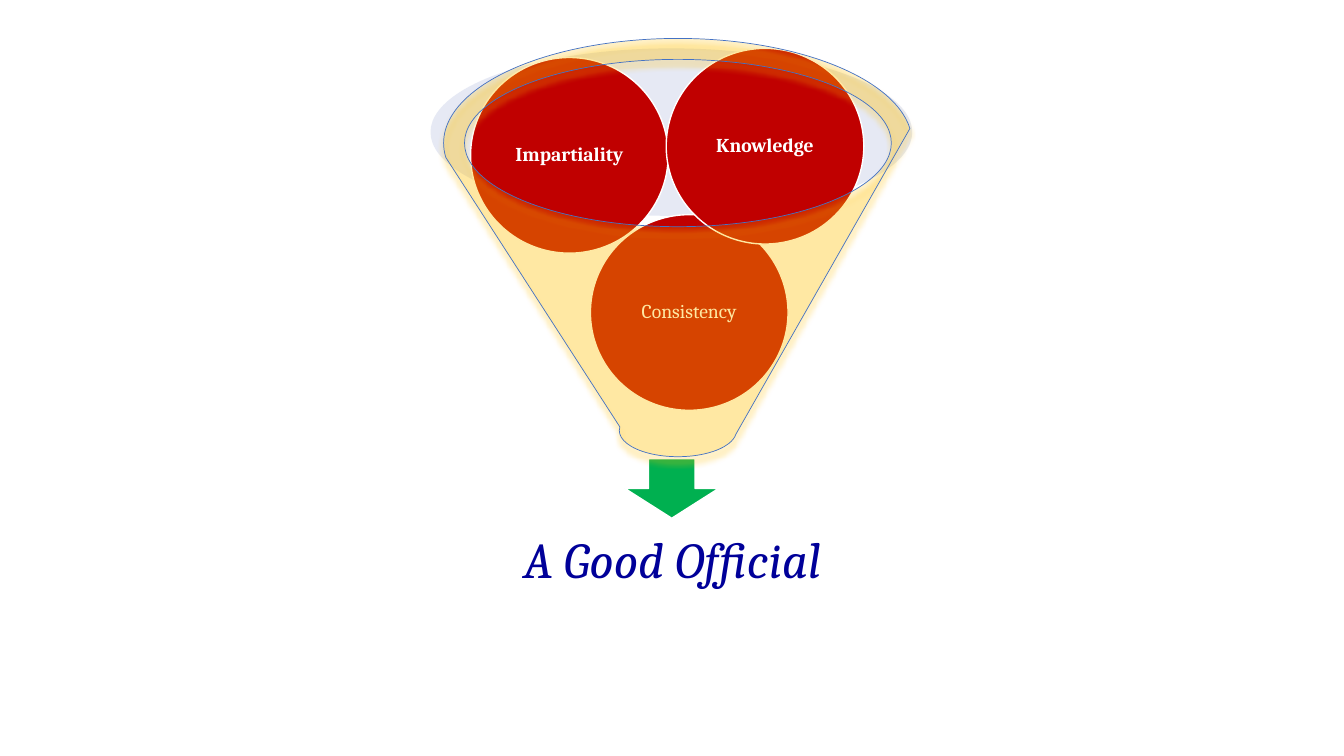
from pptx import Presentation
from pptx.dml.color import RGBColor
from pptx.enum.shapes import MSO_SHAPE
from pptx.enum.text import MSO_ANCHOR, PP_ALIGN
from pptx.oxml.ns import qn
from pptx.util import Cm, Pt
from lxml.etree import SubElement

FONT = "Cambria"
COLORS = {
    "rim": "C1C9E4",
    "arrow": "00B050",
    "ball": "C00000",
    "funnel": "FFC000",
    "edge": "4472C4",
    "white": "FFFFFF",
    "navy": "000099",
}
BALLS = [
    ("Consistency", 14.88, 5.41, False),
    ("Impartiality", 11.86, 1.45, True),
    ("Knowledge", 16.79, 1.22, True),
]


def color(name):
    return RGBColor.from_string(COLORS[name])


def add_shape(slide, kind, box, fill, line=None, width=1):
    shape = slide.shapes.add_shape(kind, *map(Cm, box))
    shape.shadow.inherit = False
    shape.fill.solid()
    shape.fill.fore_color.rgb = color(fill)
    if line:
        shape.line.color.rgb = color(line)
        shape.line.width = Pt(width)
    else:
        shape.line.fill.background()
    return shape


def set_alpha(shape, percent):
    tint = shape.element.spPr.find(qn("a:solidFill"))[0]
    SubElement(tint, qn("a:alpha"), val=str(percent * 1000))


def add_shadow(shape, name, blur, dist):
    effects = shape.element.spPr.find(qn("a:effectLst"))
    shadow = SubElement(
        effects, qn("a:outerShdw"), blurRad=str(Pt(blur)),
        dist=str(Pt(dist)), dir="5400000", rotWithShape="0")
    SubElement(shadow, qn("a:srgbClr"), val=COLORS[name])


def set_text(shape, text, size, tone, inset, bold=False, italic=False):
    frame = shape.text_frame
    frame.word_wrap = True
    frame.vertical_anchor = MSO_ANCHOR.MIDDLE
    frame.margin_left = frame.margin_right = Cm(inset)
    frame.margin_top = frame.margin_bottom = Cm(inset)
    para = frame.paragraphs[0]
    para.text = text
    para.alignment = PP_ALIGN.CENTER
    para.line_spacing = 0.9
    font = para.font
    font.name = FONT
    font.size = Pt(size)
    font.bold = bold
    font.italic = italic
    font.color.rgb = color(tone)


def add_ball(slide, text, left, top, bold):
    ball = add_shape(slide, MSO_SHAPE.OVAL, (left, top, 4.98, 4.93),
                     "ball", "white")
    set_text(ball, text, 14, "white", 0.05, bold=bold)


def add_funnel(slide):
    funnel = add_shape(slide, MSO_SHAPE.FUNNEL, (11.18, 0.97, 11.81, 10.54),
                       "funnel", "edge", 0.5)
    set_alpha(funnel, 20)
    add_shadow(funnel, "funnel", 4, 4)


def main():
    deck = Presentation()
    deck.slide_width = Cm(33.87)
    deck.slide_height = Cm(19.05)
    slide = deck.slides.add_slide(deck.slide_layouts[6])

    rim = add_shape(slide, MSO_SHAPE.OVAL, (10.85, 1.22, 12.14, 4.22), "rim")
    set_alpha(rim, 40)
    add_shape(slide, MSO_SHAPE.DOWN_ARROW, (15.75, 11.56, 2.36, 1.5),
              "arrow", "white")
    result = slide.shapes.add_textbox(Cm(9.45), Cm(12.29), Cm(14.99), Cm(3.73))
    set_text(result, "A Good Official", 36, "navy", 0.71, italic=True)
    for ball in BALLS:
        add_ball(slide, *ball)
    add_funnel(slide)

    deck.save("out.pptx")


if __name__ == "__main__":
    main()
